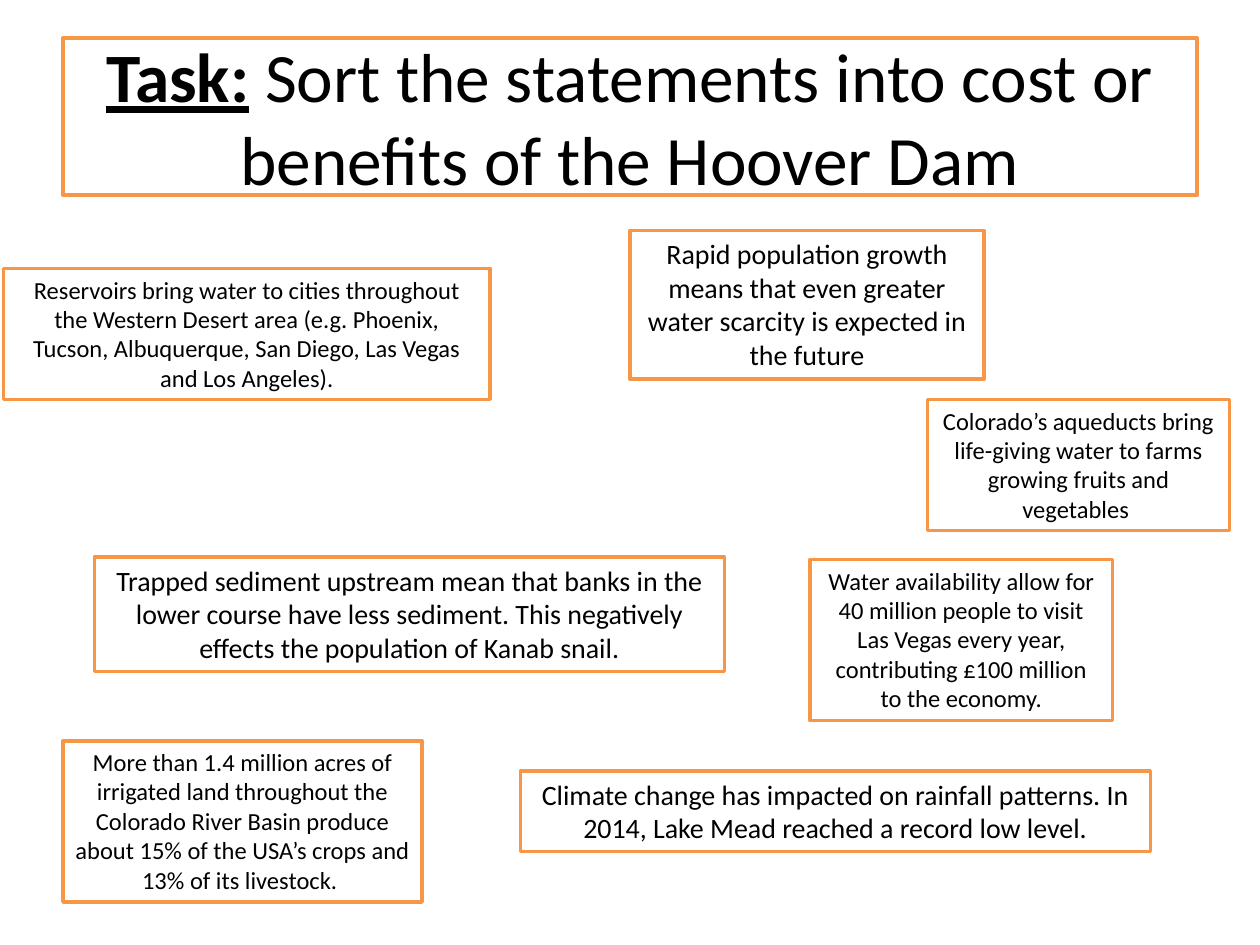
from dataclasses import dataclass

from pptx import Presentation
from pptx.dml.color import RGBColor as RGB
from pptx.enum.shapes import MSO_SHAPE as SHAPE
from pptx.enum.text import MSO_ANCHOR as ANCHOR, MSO_AUTO_SIZE as FIT, PP_ALIGN as ALIGN
from pptx.util import Emu, Pt

PX = 9144  # 100 px to the inch


@dataclass(frozen=True)
class Theme:
    font: str = "Calibri"
    text: RGB = RGB(0x00, 0x00, 0x00)
    fill: RGB = RGB(0xFF, 0xFF, 0xFF)
    border: RGB = RGB(0xF7, 0x96, 0x46)
    border_pt: float = 2
    title_pt: float = 39.6
    large_pt: float = 16
    small_pt: float = 14


T = Theme()

TITLE_BOX = (50, 30, 900, 125)
TITLE_RUNS = [
    ("Task:", {"bold": True, "underline": True}),
    (" Sort the statements into cost or benefits of the Hoover Dam", {}),
]

# Statement cards: box (left, top, width, height), type size, wording
STATEMENTS = [
    ((3, 213, 386, 104), T.small_pt,
     "Reservoirs bring water to cities throughout the Western Desert area "
     "(e.g. Phoenix, Tucson, Albuquerque, San Diego, Las Vegas and Los Angeles)."),
    ((736, 317, 240, 104), T.small_pt,
     "Colorado’s aqueducts bring life-giving water to farms growing fruits "
     "and vegetables "),
    ((50, 588, 285, 128), T.small_pt,
     "More than 1.4 million acres of irrigated land throughout the Colorado River "
     "Basin produce about 15% of the USA’s crops and 13% of its livestock. "),
    ((643, 444, 240, 128), T.small_pt,
     "Water availability allow for 40 million people to visit Las Vegas every year, "
     "contributing £100 million to the economy."),
    ((75, 442, 500, 91), T.large_pt,
     "Trapped sediment upstream mean that banks in the lower course have less "
     "sediment. This negatively effects the population of Kanab snail."),
    ((413, 612, 500, 64), T.large_pt,
     "Climate change has impacted on rainfall patterns. In 2014, Lake Mead reached "
     "a record low level."),
    ((500, 183, 281, 118), T.large_pt,
     "Rapid population growth means that even greater water scarcity is expected "
     "in the future"),
]


def set_attrs(obj, values):
    for name, value in values.items():
        setattr(obj, name, value)


def frame(sp, box):
    """Place a shape in its box with the shared fill and border."""
    set_attrs(sp, dict(zip(("left", "top", "width", "height"),
                           (Emu(v * PX) for v in box))))
    sp.fill.solid()
    sp.fill.fore_color.rgb = T.fill
    sp.line.color.rgb = T.border
    sp.line.width = Pt(T.border_pt)


def write(sp, runs, size, **frame_format):
    """Write one centred paragraph of (text, format) runs."""
    tf = sp.text_frame
    set_attrs(tf, {"word_wrap": True, **frame_format})
    p = tf.paragraphs[0]
    p.alignment = ALIGN.CENTER
    for text, fmt in runs:
        r = p.add_run()
        r.text = text
        set_attrs(r.font, {"name": T.font, "size": Pt(size), **fmt})
        r.font.color.rgb = T.text


def add_title(slide, box):
    sp = slide.shapes.title
    frame(sp, box)
    write(sp, TITLE_RUNS, T.title_pt,
          vertical_anchor=ANCHOR.MIDDLE, auto_size=FIT.NONE)


def add_statement(slide, box, size, text):
    sp = slide.shapes.add_shape(SHAPE.RECTANGLE, 0, 0, 0, 0)
    sp.shadow.inherit = False
    frame(sp, box)
    write(sp, [(text, {})], size,
          vertical_anchor=ANCHOR.TOP, auto_size=FIT.SHAPE_TO_FIT_TEXT)


def main():
    prs = Presentation()
    set_attrs(prs, {"slide_width": Emu(1000 * PX), "slide_height": Emu(750 * PX)})
    slide = prs.slides.add_slide(prs.slide_layouts[5])  # Title Only

    # Task heading
    add_title(slide, TITLE_BOX)

    # Statements to sort
    for box, size, text in STATEMENTS:
        add_statement(slide, box, size, text)

    prs.save("out.pptx")


if __name__ == "__main__":
    main()
